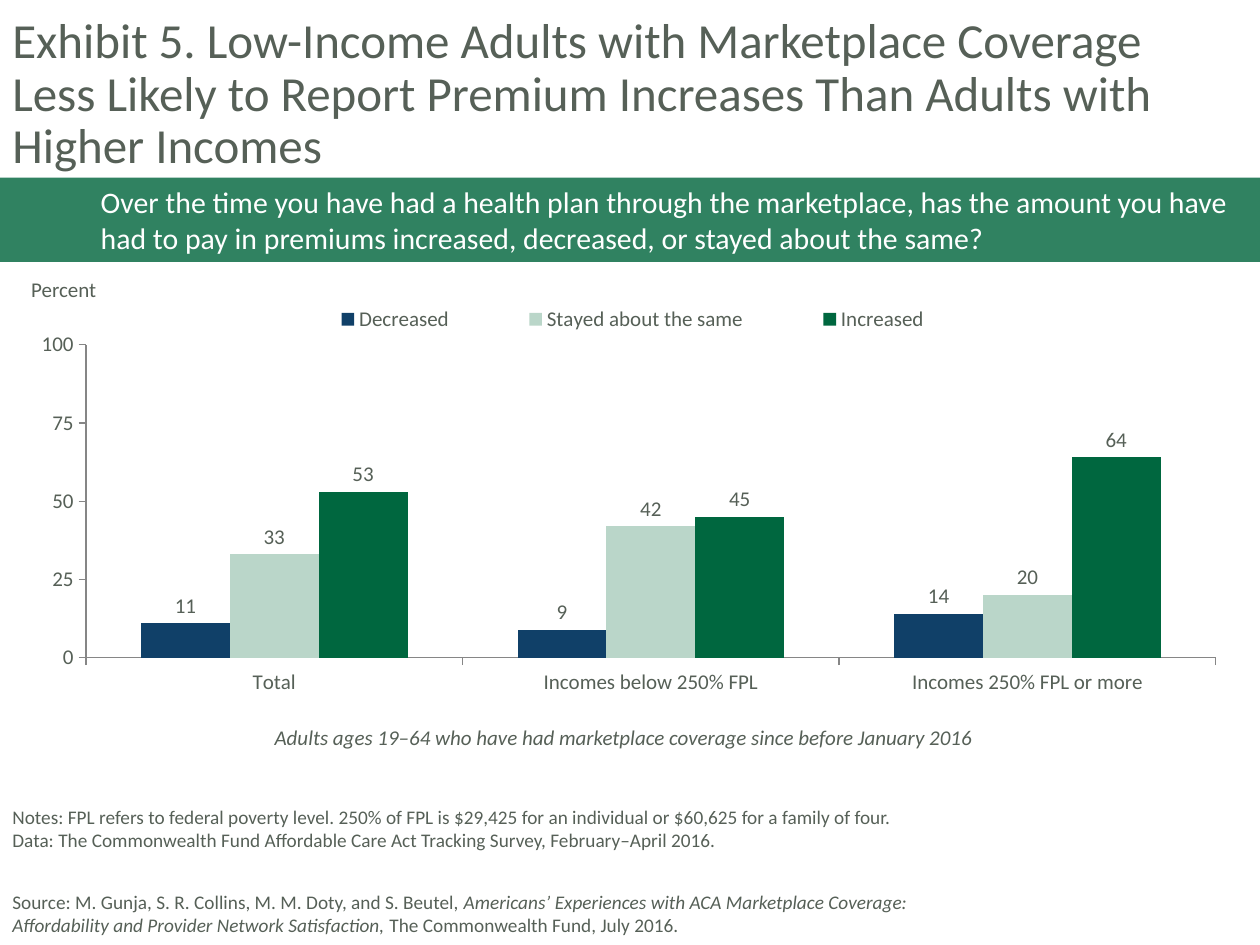
from lxml import etree
from pptx import Presentation
from pptx.chart.data import CategoryChartData
from pptx.dml.color import RGBColor
from pptx.enum.chart import XL_CHART_TYPE, XL_LABEL_POSITION, XL_LEGEND_POSITION, XL_TICK_MARK
from pptx.enum.shapes import MSO_SHAPE
from pptx.enum.text import MSO_ANCHOR, PP_ALIGN
from pptx.oxml.ns import qn
from pptx.util import Cm, Pt

CLUSTERED = XL_CHART_TYPE.COLUMN_CLUSTERED
OUTSIDE_END = XL_LABEL_POSITION.OUTSIDE_END
LEGEND_TOP = XL_LEGEND_POSITION.TOP
TICK_OUTSIDE, TICK_NONE = XL_TICK_MARK.OUTSIDE, XL_TICK_MARK.NONE
RECTANGLE = MSO_SHAPE.RECTANGLE
TOP, MIDDLE, BOTTOM = MSO_ANCHOR.TOP, MSO_ANCHOR.MIDDLE, MSO_ANCHOR.BOTTOM
LEFT, CENTER = PP_ALIGN.LEFT, PP_ALIGN.CENTER

FONT = "Calibri"
GRAY = RGBColor(0x56, 0x60, 0x57)
AXIS_GRAY = RGBColor(0x86, 0x86, 0x86)
WHITE = RGBColor(0xFF, 0xFF, 0xFF)
BANNER_GREEN = RGBColor(0x30, 0x82, 0x61)
NAVY = RGBColor(0x10, 0x40, 0x68)
PALE_GREEN = RGBColor(0xBA, 0xD6, 0xC9)
DARK_GREEN = RGBColor(0x00, 0x67, 0x3F)

CATEGORIES = ["Total", "Incomes below 250% FPL", "Incomes 250% FPL or more"]
SERIES = [
    ("Decreased", (11, 9, 14), NAVY),
    ("Stayed about the same", (33, 42, 20), PALE_GREEN),
    ("Increased", (53, 45, 64), DARK_GREEN),
]


def style_font(font, size, color=GRAY, italic=False):
    """Apply the slide typeface with a size, colour and slant."""
    font.name = FONT
    font.size = Pt(size)
    font.color.rgb = color
    font.italic = italic


def write_text(shape, paragraphs, size, color=GRAY, align=LEFT, anchor=TOP,
               italic=False, line_spacing=None, left_inset=0.25):
    """Fill a shape with paragraphs, each a list of (text, italic) runs or a string."""
    frame = shape.text_frame
    frame.word_wrap = True
    frame.vertical_anchor = anchor
    frame.margin_left = Cm(left_inset)
    for index, content in enumerate(paragraphs):
        paragraph = frame.paragraphs[0] if index == 0 else frame.add_paragraph()
        paragraph.alignment = align
        if line_spacing:
            paragraph.line_spacing = Pt(line_spacing)
        runs = [(content, italic)] if isinstance(content, str) else content
        for text, slanted in runs:
            for part, line in enumerate(text.split("\n")):
                if part:
                    paragraph.add_line_break()
                run = paragraph.add_run()
                run.text = line
                style_font(run.font, size, color, slanted)


def add_text(slide, box, paragraphs, size, **text_format):
    """Add a text box at a (left, top, width, height) box in centimetres."""
    shape = slide.shapes.add_textbox(*map(Cm, box))
    write_text(shape, paragraphs, size, **text_format)


def add_banner(slide, box, question):
    """Add the full-width coloured band that holds the survey question."""
    shape = slide.shapes.add_shape(RECTANGLE, *map(Cm, box))
    shape.shadow.inherit = False
    shape.fill.solid()
    shape.fill.fore_color.rgb = BANNER_GREEN
    shape.line.fill.background()
    write_text(shape, [question], 17, color=WHITE, anchor=MIDDLE, left_inset=2.03)


def set_layout(element, position, left, top, width, height, inner=False):
    """Place a chart part by fractions of the chart area."""
    for old in element.findall(qn("c:layout")):
        element.remove(old)
    layout = etree.Element(qn("c:layout"))
    manual = etree.SubElement(layout, qn("c:manualLayout"))
    settings = [("layoutTarget", "inner")] if inner else []
    settings += [("xMode", "edge"), ("yMode", "edge"),
                 ("x", left), ("y", top), ("w", width), ("h", height)]
    for tag, value in settings:
        etree.SubElement(manual, qn(f"c:{tag}")).set("val", str(value))
    element.insert(position, layout)


def style_axis(axis):
    """Give an axis outside ticks, a thin gray line and no gridlines."""
    axis.has_major_gridlines = False
    axis.major_tick_mark = TICK_OUTSIDE
    axis.minor_tick_mark = TICK_NONE
    axis.format.line.color.rgb = AXIS_GRAY
    axis.format.line.width = Pt(0.75)
    style_font(axis.tick_labels.font, 12)


def add_premium_chart(slide, box):
    """Add the clustered columns of premium changes by income."""
    data = CategoryChartData(number_format="0")
    data.categories = CATEGORIES
    for name, values, _ in SERIES:
        data.add_series(name, values)
    chart = slide.shapes.add_chart(CLUSTERED, *map(Cm, box), data).chart
    style_font(chart.font, 12)
    chart.has_title = False
    chart.has_legend = True
    chart.legend.position = LEGEND_TOP
    chart.legend.include_in_layout = False
    style_font(chart.legend.font, 12)

    style_axis(chart.category_axis)
    style_axis(chart.value_axis)
    chart.value_axis.minimum_scale = 0
    chart.value_axis.maximum_scale = 100
    chart.value_axis.major_unit = 25
    chart.value_axis.tick_labels.number_format = "0"
    chart.value_axis.tick_labels.number_format_is_linked = False

    plot = chart.plots[0]
    plot.gap_width = 124
    plot.overlap = 0
    plot.vary_by_categories = False
    for series, (_, _, color) in zip(plot.series, SERIES):
        series.format.fill.solid()
        series.format.fill.fore_color.rgb = color
        labels = series.data_labels
        labels.show_value = True
        labels.position = OUTSIDE_END
        labels.number_format = "0"
        labels.number_format_is_linked = False
        style_font(labels.font, 12)

    plot_area = chart.element.find(".//" + qn("c:plotArea"))
    set_layout(plot_area, 0, 0.05, 0.13, 0.93, 0.74, inner=True)
    legend = chart.element.find(".//" + qn("c:legend"))
    set_layout(legend, 1, 0.2, 0.02, 0.6, 0.1)


def main():
    """Build the exhibit slide and save it."""
    presentation = Presentation()
    presentation.slide_width = Cm(25.4)
    presentation.slide_height = Cm(19.05)
    blank_layout = presentation.slide_layouts[6]
    slide = presentation.slides.add_slide(blank_layout)

    add_text(slide, (0, 0.2, 25.4, 2.34), [
        "Exhibit 5. Low-Income Adults with Marketplace Coverage \n"
        "Less Likely to Report Premium Increases Than Adults with Higher Incomes",
    ], 28, line_spacing=30)
    add_premium_chart(slide, (0.51, 5.84, 24.49, 8.53))
    add_text(slide, (0.38, 5.46, 1.93, 0.76), ["Percent"], 12)
    add_text(slide, (4.17, 14.48, 16.81, 0.76), [
        "Adults ages 19–64 who have had marketplace coverage since before January 2016",
    ], 12, align=CENTER, italic=True)
    add_text(slide, (0, 17.81, 19.33, 1.19), [[
        ("Source: M. Gunja, S. R. Collins, M. M. Doty, and S. Beutel, ", False),
        ("Americans’ Experiences with ACA Marketplace Coverage: "
         "Affordability and Provider Network Satisfaction,", True),
        (" The Commonwealth Fund, July 2016.", False),
    ]], 11, anchor=BOTTOM)
    add_text(slide, (0, 16.1, 25.4, 1.19), [
        "Notes: FPL refers to federal poverty level. 250% of FPL is $29,425 "
        "for an individual or $60,625 for a family of four.",
        "Data: The Commonwealth Fund Affordable Care Act Tracking Survey, February–April 2016.",
    ], 11, anchor=BOTTOM)
    add_banner(slide, (0, 3.58, 25.4, 1.7),
               "Over the time you have had a health plan through the marketplace, has the amount "
               "you have had to pay in premiums increased, decreased, or stayed about the same?")
    presentation.save("out.pptx")


if __name__ == "__main__":
    main()
